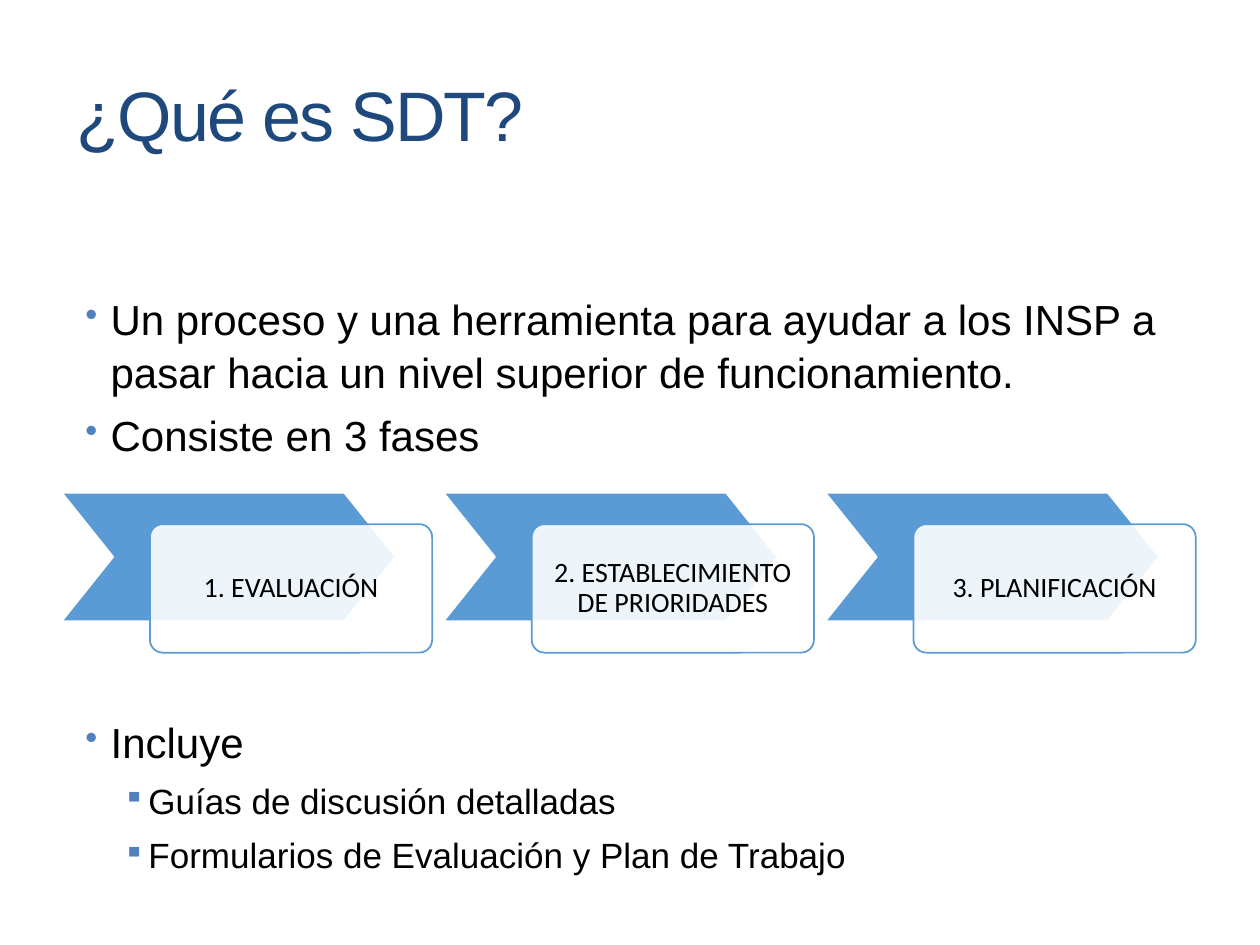
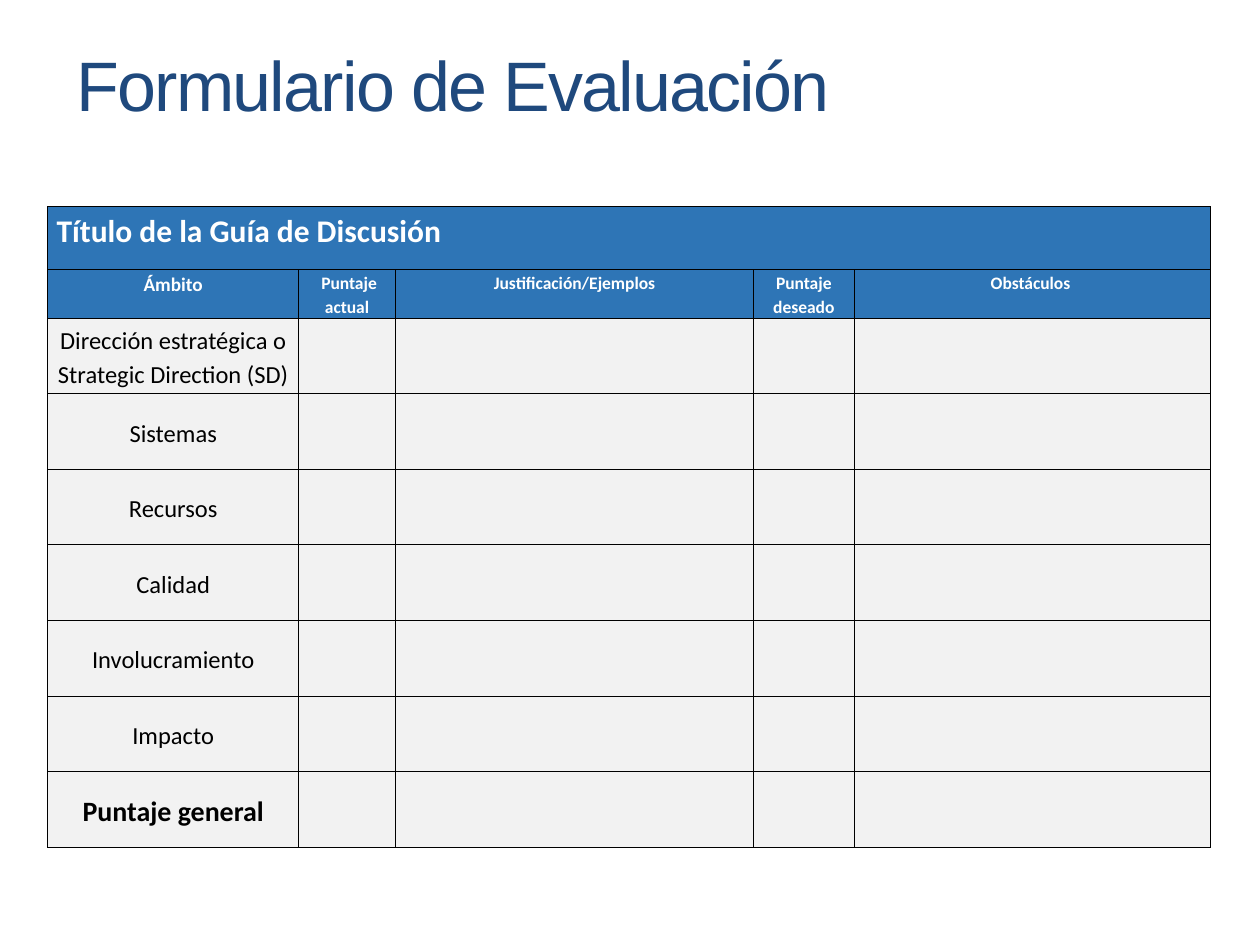
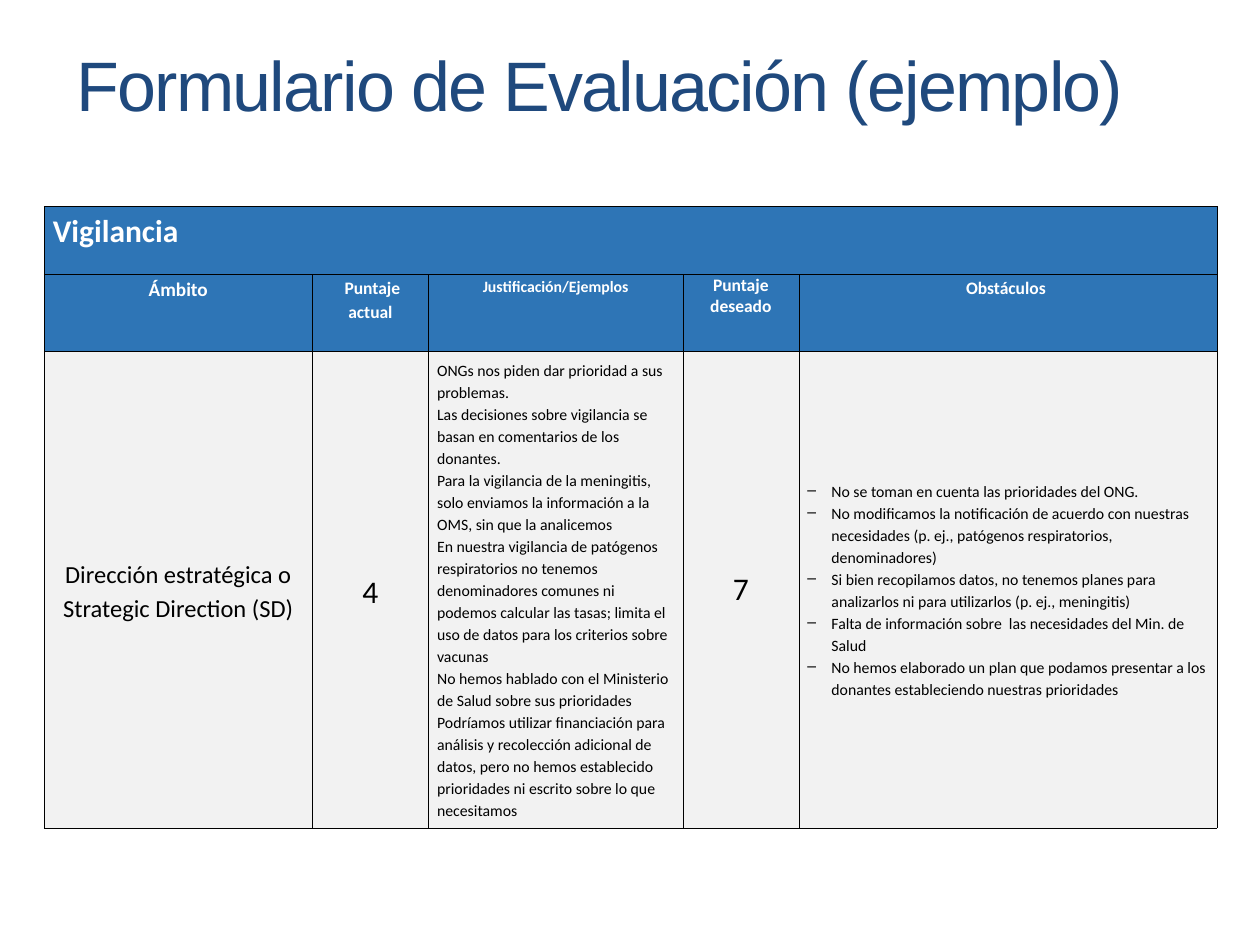
from dataclasses import dataclass

import pptx
import pptx.dml.color
import pptx.enum.shapes
import pptx.enum.text
import pptx.oxml
import pptx.oxml.ns
import pptx.util
from pptx.util import Inches

ALIGN = pptx.enum.text.PP_ALIGN
ANCHOR = pptx.enum.text.MSO_ANCHOR
SHAPE = pptx.enum.shapes.MSO_SHAPE

NAVY = "1F497D"
BULLET_BLUE = "4F81BD"
PHASE_BLUE = "5B9BD5"
HEADER_BLUE = "2E75B6"
CELL_GRAY = "F2F2F2"
WHITE = "FFFFFF"
BLACK = "000000"


@dataclass(frozen=True)
class Bullet:
    char: str
    left: float
    hang: float
    color: str | None = None
    percent: int = 100


@dataclass(frozen=True)
class Item:
    text: str
    size: int
    bullet: Bullet
    before: int = 6


@dataclass(frozen=True)
class Cell:
    paragraphs: tuple[str, ...] = ()
    size: int = 14
    bold: bool = False
    color: str = BLACK
    fill: str = CELL_GRAY
    align: ALIGN = ALIGN.CENTER
    anchor: ANCHOR = ANCHOR.MIDDLE
    line: float = 1.15
    bullet: Bullet | None = None


@dataclass(frozen=True)
class Grid:
    left: float
    widths: tuple[float, ...]
    heights: tuple[float, ...]
    border: float
    rows: list[list[Cell]]


LEVEL_1 = Bullet("•", 0.2, 0.2, BULLET_BLUE, 85)
LEVEL_2 = Bullet("▪", 0.5, 0.2, BULLET_BLUE, 85)
DASH = Bullet("–", 0.19, 0.19)
TABLE_TOP = 1.64

DEFINITION = [
    Item("Un proceso y una herramienta para ayudar a los INSP a pasar hacia "
         "un nivel superior de funcionamiento.", 24, LEVEL_1, 0),
    Item("Consiste en 3 fases", 24, LEVEL_1),
    Item("Incluye", 24, LEVEL_1, 145),
    Item("Guías de discusión detalladas", 20, LEVEL_2),
    Item("Formularios de Evaluación y Plan de Trabajo", 20, LEVEL_2),
]
PHASES = ["1. EVALUACIÓN", "2. ESTABLECIMIENTO DE PRIORIDADES", "3. PLANIFICACIÓN"]
DIRECTION = "Dirección estratégica o Strategic Direction (SD)"
AREAS = [DIRECTION, "Sistemas", "Recursos", "Calidad", "Involucramiento", "Impacto"]
REASONS = (
    "ONGs nos piden dar prioridad a sus problemas.",
    "Las decisiones sobre vigilancia se basan en comentarios de los donantes.",
    "Para la vigilancia de la meningitis, solo enviamos la información a la OMS, "
    "sin que la analicemos",
    "En nuestra vigilancia de patógenos respiratorios no tenemos denominadores comunes "
    "ni podemos calcular las tasas; limita el uso de datos para los criterios sobre vacunas",
    "No hemos hablado con el Ministerio de Salud sobre sus prioridades",
    "Podríamos utilizar financiación para análisis y recolección adicional de datos, "
    "pero no hemos establecido prioridades ni escrito sobre lo que necesitamos",
)
OBSTACLES = (
    "No se toman en cuenta las prioridades del ONG.",
    "No modificamos la notificación de acuerdo con nuestras necesidades "
    "(p. ej., patógenos respiratorios, denominadores)",
    "Si bien recopilamos datos, no tenemos planes para analizarlos ni para utilizarlos "
    "(p. ej., meningitis)",
    "Falta de información sobre  las necesidades del Min. de Salud",
    "No hemos elaborado un plan que podamos presentar a los donantes "
    "estableciendo nuestras prioridades",
)


def rgb(color: str) -> pptx.dml.color.RGBColor:
    return pptx.dml.color.RGBColor.from_string(color)


def element(xml: str):
    head, sep, tail = xml.partition(" ")
    return pptx.oxml.parse_xml(f"{head} {pptx.oxml.ns.nsdecls('a')}{sep}{tail}")


def add_bullet(p, bullet: Bullet) -> None:
    pPr = p._p.get_or_add_pPr()
    pPr.set("marL", str(Inches(bullet.left)))
    pPr.set("indent", str(-Inches(bullet.hang)))
    if bullet.color:
        pPr.append(element(f'<a:buClr ><a:srgbClr val="{bullet.color}"/></a:buClr>'))
    pPr.append(element(f'<a:buSzPct val="{bullet.percent * 1000}"/>'))
    pPr.append(element(f'<a:buChar char="{bullet.char}"/>'))


def add_text(tf, text: str, *, size: int, font: str = "Calibri", color: str = BLACK,
             bold: bool = False, align: ALIGN = ALIGN.LEFT, line: float = 1.0,
             before: int = 0, tracking: int = 0, bullet: Bullet | None = None) -> None:
    p = tf.paragraphs[0]
    if p.runs:
        p = tf.add_paragraph()
    if bullet:
        add_bullet(p, bullet)
    p.alignment = align
    p.line_spacing = line
    p.space_before = pptx.util.Pt(before)
    r = p.add_run()
    r.text = text
    r.font.name = font
    r.font.size = pptx.util.Pt(size)
    r.font.bold = bold
    r.font.color.rgb = rgb(color)
    if tracking:
        r._r.get_or_add_rPr().set("spc", str(tracking * 100))


def add_box(s, left: float, top: float, width: float, height: float):
    tf = s.shapes.add_textbox(Inches(left), Inches(top), Inches(width), Inches(height)).text_frame
    tf.word_wrap = True
    return tf


def add_title(s, text: str, top: float = 0.12) -> None:
    tf = add_box(s, 0.51, top, 9, 1.08)
    tf.vertical_anchor = ANCHOR.MIDDLE
    add_text(tf, text, size=40, font="Arial", color=NAVY, tracking=-1)


def add_shape(s, kind: SHAPE, left: float, top: float, width: float, adjust: float,
              fill: str, line: str):
    sp = s.shapes.add_shape(kind, Inches(left), Inches(top), Inches(width), Inches(1.02))
    sp.shadow.inherit = False
    sp.adjustments[0] = adjust
    sp.fill.solid()
    sp.fill.fore_color.rgb = rgb(fill)
    sp.line.color.rgb = rgb(line)
    sp.line.width = pptx.util.Pt(1)
    return sp


def add_phase(s, left: float, text: str) -> None:
    add_shape(s, SHAPE.CHEVRON, left, 3.91, 2.65, 0.4, PHASE_BLUE, WHITE)
    card = add_shape(s, SHAPE.ROUNDED_RECTANGLE, left + 0.7, 4.16, 2.24, 0.1, WHITE, PHASE_BLUE)
    color = card._element.spPr.find(pptx.oxml.ns.qn("a:solidFill"))[0]
    color.append(element('<a:alpha val="90000"/>'))
    tf = card.text_frame
    tf.word_wrap = True
    tf.vertical_anchor = ANCHOR.MIDDLE
    tf.margin_left = tf.margin_right = tf.margin_top = tf.margin_bottom = Inches(0.12)
    add_text(tf, text, size=16, align=ALIGN.CENTER, line=0.9)


def set_borders(cell, width: float) -> None:
    tcPr = cell._tc.get_or_add_tcPr()
    for i, side in enumerate("LRTB"):
        tcPr.insert(i, element(
            f'<a:ln{side} w="{pptx.util.Pt(width)}"><a:solidFill><a:srgbClr val="{BLACK}"/>'
            f'</a:solidFill></a:ln{side}>'))


def fill_cell(cell, content: Cell, border: float) -> None:
    cell.fill.solid()
    cell.fill.fore_color.rgb = rgb(content.fill)
    cell.margin_left = cell.margin_right = Inches(0.07)
    cell.margin_top = cell.margin_bottom = 0
    cell.vertical_anchor = content.anchor
    for text in content.paragraphs:
        add_text(cell.text_frame, text, size=content.size, color=content.color,
                 bold=content.bold, align=content.align, line=content.line,
                 bullet=content.bullet)
    set_borders(cell, border)


def add_grid(s, grid: Grid) -> None:
    table = s.shapes.add_table(
        len(grid.heights), len(grid.widths), Inches(grid.left), Inches(TABLE_TOP),
        Inches(sum(grid.widths)), Inches(sum(grid.heights))).table
    table.first_row = table.horz_banding = False
    for column, width in zip(table.columns, grid.widths):
        column.width = Inches(width)
    for row, height in zip(table.rows, grid.heights):
        row.height = Inches(height)
    for row, contents in zip(table.rows, grid.rows):
        for cell, content in zip(row.cells, contents):
            fill_cell(cell, content, grid.border)
    table.cell(0, 0).merge(table.cell(0, len(grid.widths) - 1))


def header(text: str, size: int = 10, line: float = 1.15,
           align: ALIGN = ALIGN.CENTER) -> Cell:
    return Cell((text,), size, True, WHITE, HEADER_BLUE, align, ANCHOR.TOP, line)


def header_rows(title: str, reasons_size: int, target_line: float) -> list[list[Cell]]:
    return [
        [header(title, 18, align=ALIGN.LEFT)] + [Cell(fill=HEADER_BLUE)] * 4,
        [header("Ámbito", 11), header(" Puntaje actual"),
         header("Justificación/Ejemplos", reasons_size),
         header("Puntaje deseado", line=target_line), header("Obstáculos ")],
    ]


def build_definition(s) -> None:
    tf = add_box(s, 0.58, 2.26, 8.83, 5.39)
    for item in DEFINITION:
        add_text(tf, item.text, size=item.size, font="Arial", line=1.05,
                 before=item.before, bullet=item.bullet)
    add_title(s, "¿Qué es SDT?", 0.36)
    for i, phase in enumerate(PHASES):
        add_phase(s, 0.49 + i * 3.03, phase)


def build_form(s) -> None:
    labels = [Cell((area,)) for area in AREAS] + [Cell(("Puntaje general",), 16, True)]
    rows = header_rows("Título de la Guía de Discusión", 10, 1.15)
    rows += [[label] + [Cell()] * 4 for label in labels]
    add_grid(s, Grid(0.38, (1.99, 0.77, 2.84, 0.8, 2.83),
                     (0.5, 0.36) + (0.6,) * len(labels), 0.5, rows))
    add_title(s, "Formulario de Evaluación")


def build_example(s) -> None:
    rows = header_rows("Vigilancia", 9, 1.0)
    rows.append([
        Cell((DIRECTION,)),
        Cell(("4",), 18),
        Cell(REASONS, 9, align=ALIGN.LEFT),
        Cell(("7",), 18, line=1.0),
        Cell(OBSTACLES, 9, align=ALIGN.LEFT, bullet=DASH),
    ])
    add_grid(s, Grid(0.35, (2.13, 0.92, 2.02, 0.92, 3.32), (0.54, 0.61, 3.78), 0.25, rows))
    add_title(s, "Formulario de Evaluación (ejemplo)")


def main() -> None:
    prs = pptx.Presentation()
    prs.slide_width = Inches(10)
    prs.slide_height = Inches(7.5)
    for build in (build_definition, build_form, build_example):
        build(prs.slides.add_slide(prs.slide_layouts[6]))
    prs.save("out.pptx")


if __name__ == "__main__":
    main()
